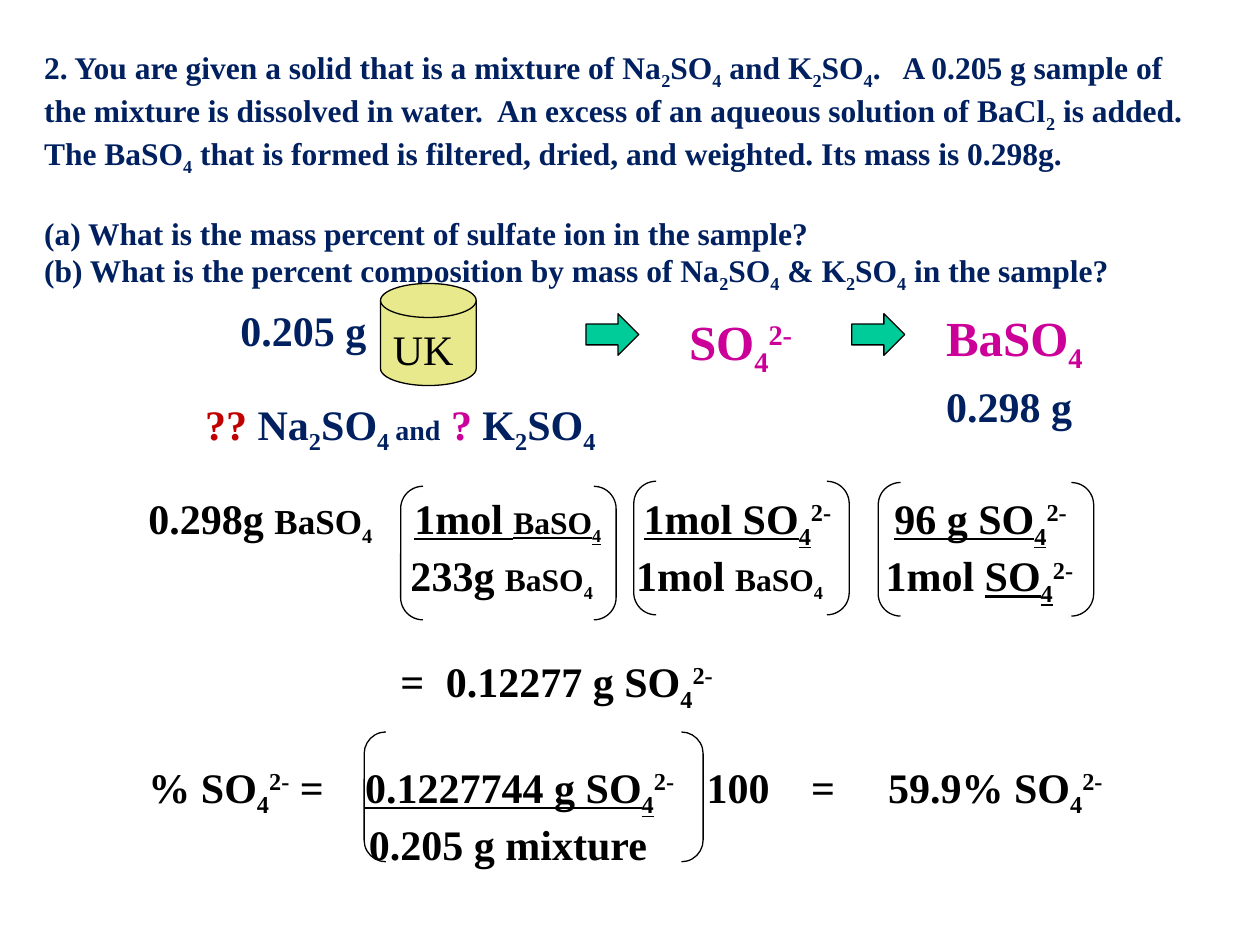
"""Build a chemistry slide on finding the sulfate mass percent of a mixture."""
from typing import NamedTuple, Optional

from lxml.etree import SubElement
from pptx import Presentation
from pptx.dml.color import RGBColor
from pptx.enum.shapes import MSO_SHAPE as Shape
from pptx.enum.text import MSO_ANCHOR as Anchor, MSO_AUTO_SIZE as AutoSize, PP_ALIGN as Align
from pptx.oxml.ns import qn
from pptx.util import Inches, Pt

FONT = "Times New Roman"
NAVY, MAGENTA, RED, BLACK = "002060", "CC0099", "C00000", "000000"
GREEN, YELLOW = "00CC99", "E8E88C"
CELL = Inches(0.1)
SCRIPTS = {"_": "-25000", "^": "30000"}


class Box(NamedTuple):
    """Place on a grid of 100 columns and 75 rows."""
    col: float
    row: float
    cols: float
    rows: float

    def emu(self) -> tuple:
        return tuple(int(n * CELL) for n in self)


class Term(NamedTuple):
    """Text of one style, with {_sub} and {^super} scripts."""
    text: str
    size: float = 24
    color: str = BLACK
    under: bool = False
    bold: bool = True


class Line(NamedTuple):
    """Paragraph with tab stops in grid columns and space before in points."""
    terms: list
    tabs: tuple = ()
    before: float = 0


class Figure(NamedTuple):
    """Preset shape with an optional fill, adjustment and caption."""
    kind: Shape
    box: Box
    fill: Optional[str] = None
    adjust: Optional[float] = None
    caption: Optional[Term] = None


def rgb(color: str) -> RGBColor:
    """Turn a hex string into a colour."""
    return RGBColor.from_string(color)


def add_term(p, term: Term) -> None:
    """Add one term run by run, raising or lowering its scripts."""
    for i, piece in enumerate(term.text.replace("}", "{").split("{")):
        if not piece:
            continue
        mark = piece[0] if i % 2 else ""
        r = p.add_run()
        r.text = piece[1:] if mark else piece
        f = r.font
        f.name, f.size, f.bold = FONT, Pt(term.size), term.bold
        f.color.rgb = rgb(term.color)
        if term.under and mark != "^":
            f.underline = True
        if mark:
            r._r.get_or_add_rPr().set("baseline", SCRIPTS[mark])


def add_tabs(p, stops: tuple) -> None:
    """Give a paragraph left tab stops."""
    tab_list = SubElement(p._p.get_or_add_pPr(), qn("a:tabLst"))
    for stop in stops:
        SubElement(tab_list, qn("a:tab"), pos=str(int(stop * CELL)), algn="l")


def write(tf, lines: list, wrap: bool = True) -> None:
    """Fill a text frame with lines from its top left corner."""
    tf.word_wrap, tf.vertical_anchor = wrap, Anchor.TOP
    tf.auto_size = AutoSize.NONE
    for i, line in enumerate(lines):
        p = tf.add_paragraph() if i else tf.paragraphs[0]
        p.alignment, p.space_before = Align.LEFT, Pt(line.before)
        if line.tabs:
            add_tabs(p, line.tabs)
        for term in line.terms:
            add_term(p, term)


def add_text(s, box: Box, lines: list, wrap: bool = False) -> None:
    """Add a text box."""
    write(s.shapes.add_textbox(*box.emu()).text_frame, lines, wrap)


def add_figure(s, fig: Figure) -> None:
    """Add a thinly outlined preset shape."""
    sp = s.shapes.add_shape(fig.kind, *fig.box.emu())
    sp.shadow.inherit = False
    sp.line.color.rgb, sp.line.width = rgb(BLACK), Pt(0.75)
    if fig.fill:
        sp.fill.solid()
        sp.fill.fore_color.rgb = rgb(fig.fill)
    else:
        sp.fill.background()
    if fig.adjust:
        sp.adjustments[0] = fig.adjust
    if fig.caption:
        write(sp.text_frame, [Line([fig.caption])])


QUESTION = [
    Line([Term("2. You are given a solid that is a mixture of Na{_2}SO{_4} and K{_2}SO{_4}.   "
               "A 0.205 g sample of the mixture is dissolved in water.  An excess of an aqueous "
               "solution of BaCl{_2} is added.  The BaSO{_4} that is formed is filtered, dried, "
               "and weighted. Its mass is 0.298g.", 18, NAVY)]),
    Line([Term("(a) What is the mass percent of sulfate ion in the sample?", 18, NAVY)], before=21),
    Line([Term("(b) What is the percent composition by mass of Na{_2}SO{_4} & K{_2}SO{_4} "
               "in the sample?", 18, NAVY)]),
]
WORKING = [
    Line([Term("0.298g "), Term("BaSO{_4}", 20), Term("\t"),
          Term("1mol ", under=True), Term("BaSO{_4}", 18, under=True), Term("\t"),
          Term("1mol SO{_4}{^2-}", under=True), Term("\t"),
          Term("96 g SO{_4}{^2-}", under=True)], (21.1, 39.3, 59.2)),
    Line([Term("\t233g "), Term("BaSO{_4}", 18), Term("\t1mol "), Term("BaSO{_4}", 18),
          Term("\t1mol "), Term("SO{_4}{^2-}", under=True)], (20.8, 38.7, 58.5)),
    Line([Term("\t=\t0.12277 g SO{_4}{^2-}")], (20, 23.6), 27.6),
    Line([Term("% SO{_4}{^2-} =\t"), Term("0.1227744 g SO{_4}{^2-}", under=True),
          Term("\t100\t=\t59.9% SO{_4}{^2-}")], (17.2, 44.3, 52.6, 58.7), 27.6),
    Line([Term("\t0.205 g mixture")], (17.5,)),
]
LABELS = [
    (Box(15.3, 31.1, 34.2, 5.1),
     [Term("?? ", color=RED), Term("Na{_2}SO{_4 }", color=NAVY), Term("and", 16, NAVY),
      Term(" ", color=NAVY), Term("?", color=MAGENTA), Term(" K{_2}SO{_4}", color=NAVY)]),
    (Box(53.7, 24.2, 10.8, 5.7), [Term("SO{_4}{^2-}", 28, MAGENTA)]),
    (Box(18.1, 23.7, 12.1, 5), [Term("0.205 g", color=NAVY)]),
    (Box(74.1, 29.7, 12.1, 5.1), [Term("0.298 g", color=NAVY)]),
    (Box(74.1, 23.9, 13.2, 5.7), [Term("BaSO{_4}", 28, MAGENTA)]),
]
BRACKETS = [Box(31.8, 38.6, 17.1, 10.6), Box(50.3, 38.2, 17.1, 10.6),
            Box(69.7, 38.3, 17.1, 10.6), Box(28.9, 58.1, 26.9, 10.3)]
FIGURES = [
    Figure(Shape.FLOWCHART_MAGNETIC_DISK, Box(30.2, 22.5, 7.6, 8.1), YELLOW,
           caption=Term("UK", bold=False)),
    *(Figure(Shape.RIGHT_ARROW, Box(col, 24.9, 4.2, 3.3), GREEN) for col in (46.5, 67.6)),
    *(Figure(Shape.DOUBLE_BRACKET, box, adjust=0.167) for box in BRACKETS),
]


def main() -> None:
    """Build and save the slide."""
    prs = Presentation()
    prs.slide_width, prs.slide_height = 100 * CELL, 75 * CELL
    s = prs.slides.add_slide(prs.slide_layouts[5])
    title = s.shapes.title
    title.left, title.top, title.width, title.height = Box(2.5, 3.3, 94.2, 19.2).emu()
    write(title.text_frame, QUESTION)
    add_text(s, Box(10.8, 38.6, 79.6, 33.3), WORKING, wrap=True)
    for fig in FIGURES:
        add_figure(s, fig)
    for box, terms in LABELS:
        add_text(s, box, [Line(terms)])
    prs.save("out.pptx")


if __name__ == "__main__":
    main()
